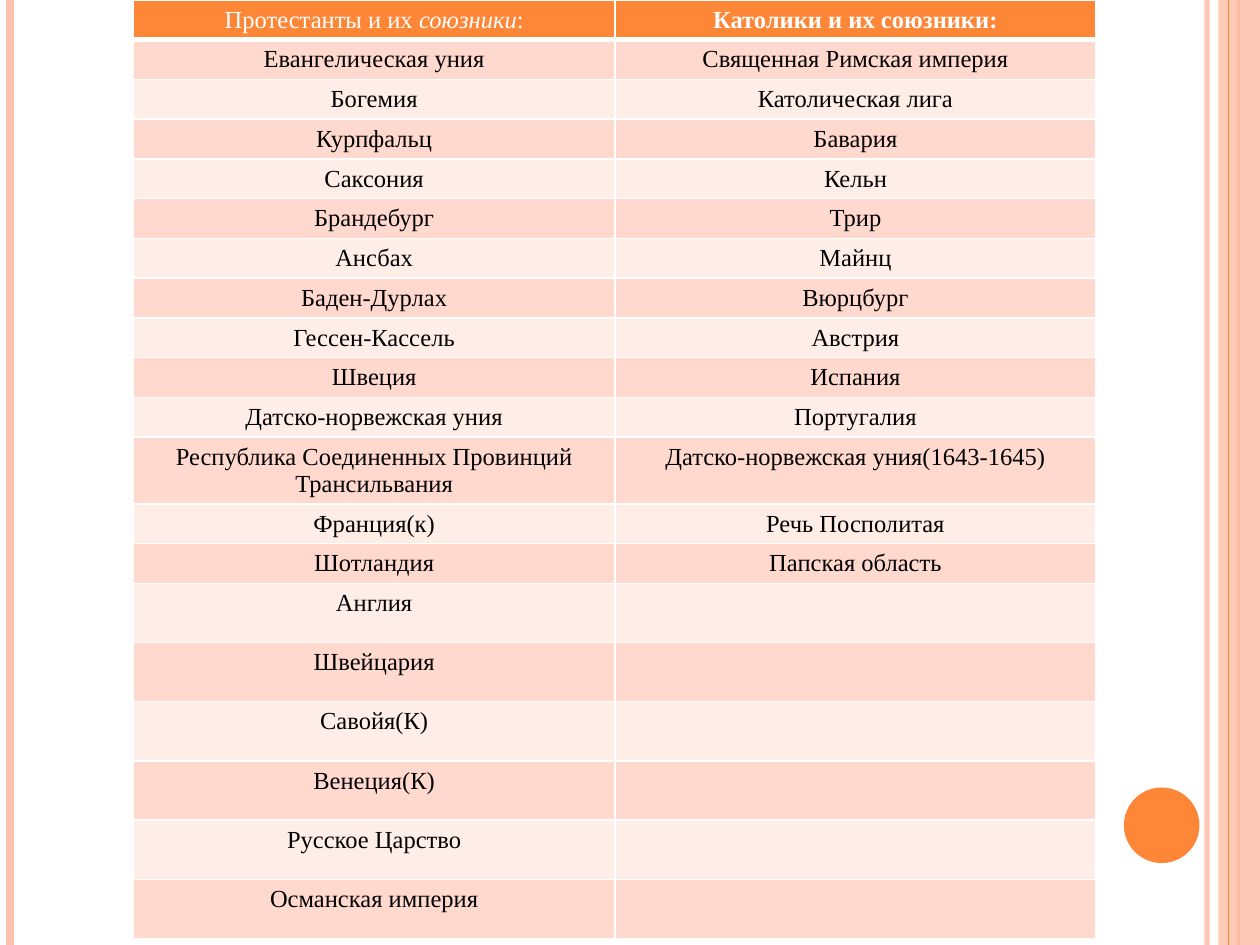
from dataclasses import dataclass

from pptx import Presentation
from pptx.dml.color import RGBColor
from pptx.enum.shapes import MSO_CONNECTOR, MSO_SHAPE
from pptx.enum.text import PP_ALIGN
from pptx.oxml.ns import qn
from pptx.util import Inches, Pt
from lxml import etree

STRAIGHT = MSO_CONNECTOR.STRAIGHT
RECTANGLE = MSO_SHAPE.RECTANGLE
OVAL = MSO_SHAPE.OVAL
CENTER = PP_ALIGN.CENTER


@dataclass(frozen=True)
class Theme:
    accent: str = "FE8637"
    pale: str = "FEC3AE"
    bands: tuple = ("FFD9CE", "FFEDE8")
    white: str = "FFFFFF"
    black: str = "000000"
    font: str = "Times New Roman"
    size: int = 14
    border: int = 1
    header_border: int = 3


THEME = Theme()
WIDTH, HEIGHT = 10, 7.5
TABLE_LEFT, COLUMN_WIDTH = 1.06, 3.82
ROW_HEIGHT, DOUBLE_HEIGHT, TALL_HEIGHT = 0.31, 0.53, 0.47
DOUBLE_ROW, FIRST_TALL_ROW = 11, 14

HEADERS = (
    (("Протестанты и их ", False, False), ("союзники", False, True), (":", False, False)),
    (("Католики и их союзники:", True, False),),
)
PROTESTANTS = (
    "Евангелическая уния", "Богемия", "Курпфальц", "Саксония", "Брандебург",
    "Ансбах", "Баден-Дурлах", "Гессен-Кассель", "Швеция",
    "Датско-норвежская уния", "Республика Соединенных Провинций Трансильвания",
    "Франция(к)", "Шотландия", "Англия", "Швейцария", "Савойя(К)",
    "Венеция(К)", "Русское Царство", "Османская империя",
)
CATHOLICS = (
    "Священная Римская империя", "Католическая лига", "Бавария", "Кельн", "Трир",
    "Майнц", "Вюрцбург", "Австрия", "Испания", "Португалия",
    "Датско-норвежская уния(1643-1645)", "Речь Посполитая", "Папская область",
)


def color(code):
    return RGBColor.from_string(code)


def set_opacity(element, percent):
    for node in element.iter(qn("a:srgbClr")):
        etree.SubElement(node, qn("a:alpha"), val=str(percent * 1000))


def add_stripe(slide, left, code, width, opacity=100):
    connector = slide.shapes.add_connector(
        STRAIGHT, Inches(left), 0, Inches(left), Inches(HEIGHT))
    connector.line.color.rgb = color(code)
    connector.line.width = Pt(width)
    properties = connector._element.spPr
    if opacity < 100:
        set_opacity(properties, opacity)
    etree.SubElement(properties, qn("a:effectLst"))


def add_plain_shape(slide, kind, left, top, width, height, code, opacity=100):
    shape = slide.shapes.add_shape(
        kind, Inches(left), Inches(top), Inches(width), Inches(height))
    shape.shadow.inherit = False
    shape.fill.solid()
    shape.fill.fore_color.rgb = color(code)
    shape.line.fill.background()
    if opacity < 100:
        set_opacity(shape._element.spPr, opacity)


def set_borders(cell, top, bottom):
    properties = cell._tc.get_or_add_tcPr()
    widths = {"lnL": THEME.border, "lnR": THEME.border, "lnT": top, "lnB": bottom}
    for index, (tag, width) in enumerate(widths.items()):
        line = etree.Element(qn(f"a:{tag}"), w=str(Pt(width)))
        fill = etree.SubElement(line, qn("a:solidFill"))
        etree.SubElement(fill, qn("a:srgbClr"), val=THEME.white)
        properties.insert(index, line)


def fill_cell(cell, runs, text_color, fill_color):
    cell.fill.solid()
    cell.fill.fore_color.rgb = color(fill_color)
    paragraph = cell.text_frame.paragraphs[0]
    paragraph.alignment = CENTER
    for text, bold, italic in runs:
        run = paragraph.add_run()
        run.text = text
        run.font.name = THEME.font
        run.font.size = Pt(THEME.size)
        run.font.bold = bold
        run.font.italic = italic
        run.font.color.rgb = color(text_color)


def row_height(row):
    if row == DOUBLE_ROW:
        return DOUBLE_HEIGHT
    return TALL_HEIGHT if row >= FIRST_TALL_ROW else ROW_HEIGHT


def add_alliance_table(slide):
    row_count = len(PROTESTANTS) + 1
    heights = [row_height(row) for row in range(row_count)]
    table = slide.shapes.add_table(
        row_count, len(HEADERS), Inches(TABLE_LEFT), 0,
        Inches(COLUMN_WIDTH * len(HEADERS)), Inches(sum(heights))).table
    table.horz_banding = False
    for row, height in enumerate(heights):
        table.rows[row].height = Inches(height)
    for column, (header, members) in enumerate(zip(HEADERS, (PROTESTANTS, CATHOLICS))):
        table.columns[column].width = Inches(COLUMN_WIDTH)
        for row in range(row_count):
            cell = table.cell(row, column)
            if row == 0:
                fill_cell(cell, header, THEME.white, THEME.accent)
            else:
                runs = [(name, False, False) for name in members[row - 1:row]]
                fill_cell(cell, runs, THEME.black, THEME.bands[(row - 1) % 2])
            set_borders(cell,
                        THEME.header_border if row == 1 else THEME.border,
                        THEME.header_border if row == 0 else THEME.border)


def add_decoration(slide):
    add_stripe(slide, 9.58, THEME.pale, 3, 93)
    add_stripe(slide, 0.08, THEME.pale, 4.5)
    add_stripe(slide, 9.83, THEME.accent, 1.5)
    add_plain_shape(slide, RECTANGLE, 9.67, 0, 0.33, HEIGHT, THEME.pale, 87)
    add_stripe(slide, 9.75, THEME.accent, 0.75)
    add_plain_shape(slide, OVAL, 8.92, 6.25, 0.6, 0.6, THEME.accent)


def main():
    presentation = Presentation()
    presentation.slide_width = Inches(WIDTH)
    presentation.slide_height = Inches(HEIGHT)
    slide = presentation.slides.add_slide(presentation.slide_layouts[6])
    add_decoration(slide)
    add_alliance_table(slide)
    presentation.save("out.pptx")


if __name__ == "__main__":
    main()
